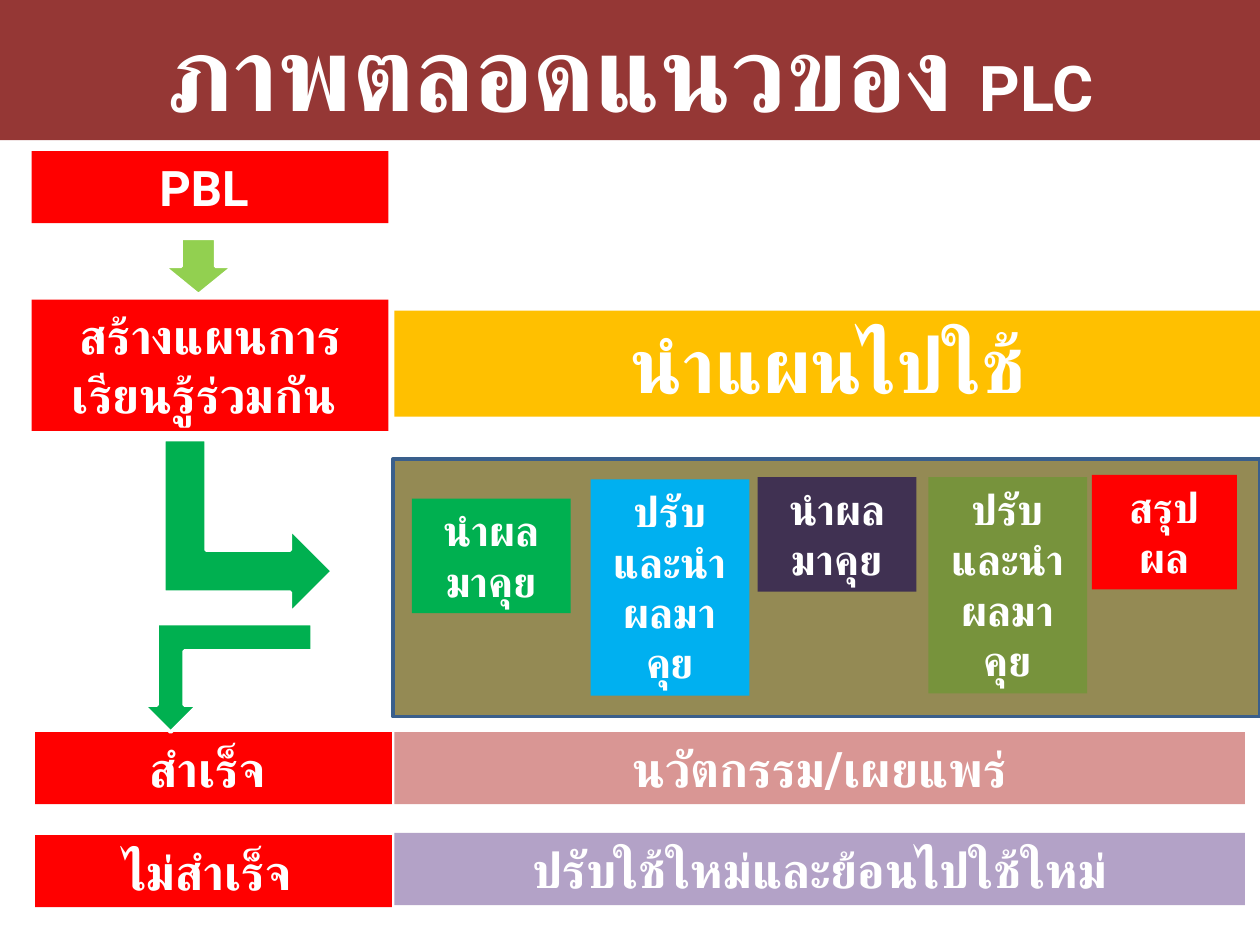
import pptx
import pptx.dml.color
import pptx.enum.shapes
import pptx.enum.text
import pptx.oxml.ns
import pptx.util
from lxml import etree

Pt = pptx.util.Pt
RGB = pptx.dml.color.RGBColor
KIND = pptx.enum.shapes.MSO_SHAPE

WHITE = RGB(0xFF, 0xFF, 0xFF)
MAROON = RGB(0x95, 0x37, 0x35)
RED = RGB(0xFF, 0x00, 0x00)
AMBER = RGB(0xFF, 0xC0, 0x00)
OLIVE = RGB(0x94, 0x8A, 0x54)
NAVY = RGB(0x3A, 0x5F, 0x8C)
GREEN = RGB(0x00, 0xB0, 0x50)
LIME = RGB(0x92, 0xD0, 0x50)
MOSS = RGB(0x77, 0x93, 0x3C)
SKY = RGB(0x00, 0xB0, 0xF0)
PLUM = RGB(0x40, 0x31, 0x52)
ROSE = RGB(0xD9, 0x96, 0x94)
LILAC = RGB(0xB3, 0xA2, 0xC7)


class Deck:
    font = "Roboto"

    def __init__(self, wide, high):
        self.show = pptx.Presentation()
        self.show.slide_width = Pt(wide)
        self.show.slide_height = Pt(high)
        self.slide = self.show.slides.add_slide(self.show.slide_layouts[5])

    def paint(self, shape, fill):
        shape.fill.solid()
        shape.fill.fore_color.rgb = fill

    def style(self, run, size):
        run.font.name = self.font
        run.font.size = Pt(size)
        run.font.bold = True
        run.font.color.rgb = WHITE
        mark = etree.SubElement(run.font._element, pptx.oxml.ns.qn("a:cs"))
        mark.set("typeface", self.font)

    def setup(self, frame):
        frame.word_wrap = True
        frame.auto_size = pptx.enum.text.MSO_AUTO_SIZE.SHAPE_TO_FIT_TEXT
        frame.vertical_anchor = pptx.enum.text.MSO_ANCHOR.TOP
        for para in frame.paragraphs:
            para.alignment = pptx.enum.text.PP_ALIGN.CENTER

    def title(self, area, fill, text, size, tail, small):
        shape = self.slide.shapes.title
        shape.left, shape.top, shape.width, shape.height = map(Pt, area)
        self.paint(shape, fill)
        frame = shape.text_frame
        frame.text = text
        para = frame.paragraphs[0]
        self.style(para.runs[0], size)
        last = para.add_run()
        last.text = tail
        self.style(last, small)
        self.setup(frame)

    def box(self, area, fill, text, size):
        shape = self.slide.shapes.add_textbox(*map(Pt, area))
        self.paint(shape, fill)
        frame = shape.text_frame
        frame.text = text
        for para in frame.paragraphs:
            self.style(para.runs[0], size)
        self.setup(frame)

    def block(self, kind, area, fill, line, turn=0):
        shape = self.slide.shapes.add_shape(kind, *map(Pt, area))
        shape.shadow.inherit = False
        self.paint(shape, fill)
        shape.line.color.rgb = line
        shape.line.width = Pt(2)
        shape.rotation = turn

    def save(self):
        self.show.save("out.pptx")


def main():
    deck = Deck(720, 540)
    deck.title((0, 0, 720, 80), MAROON, "ภาพตลอดแนวของ ", 60, "PLC", 36)
    deck.block(KIND.RECTANGLE, (224.6, 262.2, 495.4, 147.4), OLIVE, NAVY)

    for left, top, high, text in (
        (18, 86.4, 41.2, "PBL "),
        (18, 171.2, 75.1, "สร้างแผนการเรียนรู้ร่วมกัน "),
        (20, 418.4, 41.2, "สำเร็จ "),
        (20, 477.2, 41.2, "ไม่สำเร็จ "),
    ):
        deck.box((left, top, 204, high), RED, text, 28)

    for top, wide, high, fill, text, size in (
        (177.6, 496, 60.6, AMBER, "นำแผนไปใช้", 44),
        (418.4, 486, 41.2, ROSE, "นวัตกรรม/เผยแพร่", 28),
        (476, 486, 41.2, LILAC, "ปรับใช้ใหม่และย้อนไปใช้ใหม่", 28),
    ):
        deck.box((225.4, top, wide, high), fill, text, size)

    talk, tune = "นำผลมาคุย", "ปรับและนำผลมาคุย"
    for left, top, wide, high, fill, text in (
        (235.4, 285, 90.7, 65.4, GREEN, talk),
        (337.5, 274, 90.7, 123.6, SKY, tune),
        (433, 272.7, 90.7, 65.4, PLUM, talk),
        (530.5, 272.7, 90.7, 123.6, MOSS, tune),
        (624, 271.4, 82.8, 65.4, RED, "สรุป\nผล"),
    ):
        deck.box((left, top, wide, high), fill, text, 24)

    deck.block(KIND.DOWN_ARROW, (93.6, 136.2, 39.6, 32.2), LIME, WHITE)
    deck.block(KIND.BENT_UP_ARROW, (92.2, 252.7, 99.2, 96.4), GREEN, WHITE, 90)
    deck.block(KIND.BENT_UP_ARROW, (82, 356.4, 96.4, 62), GREEN, WHITE, 180)
    deck.save()


if __name__ == "__main__":
    main()
